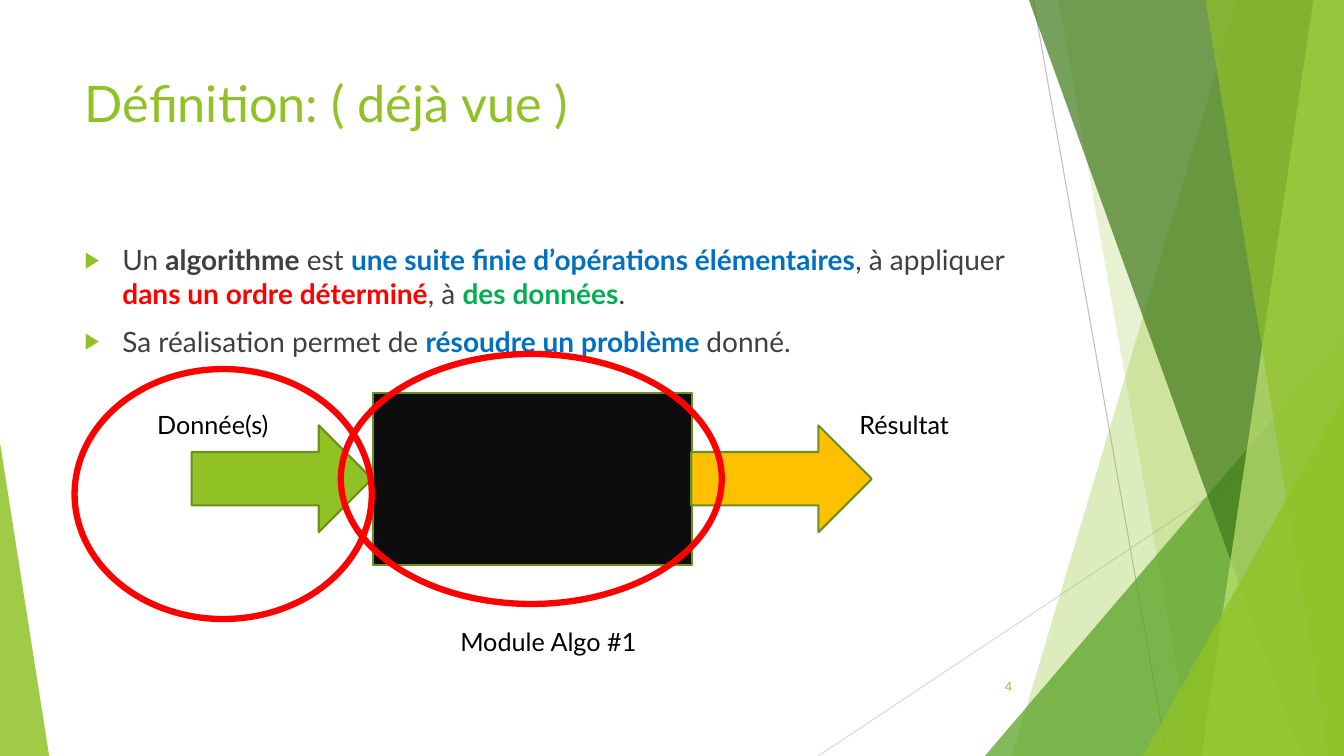
from lxml.etree import SubElement
from pptx import Presentation
from pptx.dml.color import RGBColor
from pptx.enum.shapes import MSO_CONNECTOR as Connector, MSO_SHAPE as Preset
from pptx.enum.text import MSO_ANCHOR as Anchor, MSO_AUTO_SIZE as AutoSize, PP_ALIGN as Align
from pptx.oxml.ns import qn
from pptx.util import Cm, Pt

WIDTH, HEIGHT = 33.87, 19.05
COLORS = {
    "green": "90C226", "mid green": "54A021", "dark green": "3F7819",
    "light green": "C0E474", "outline": "6B901C", "text": "404040",
    "blue": "0070C0", "red": "FF0000", "emerald": "00B050",
    "black": "000000", "box": "0D0D0D", "orange": "FFC000",
    "gray": "BFBFBF", "light gray": "D9D9D9",
}


def rgb(color):
    return RGBColor.from_string(COLORS[color])


def add_run(paragraph, text, size=18, color="black", bold=False):
    run = paragraph.add_run()
    run.text = text
    run.font.name = "Lato"
    run.font.size = Pt(size)
    run.font.bold = bold
    run.font.color.rgb = rgb(color)


class FacetSlide:
    def __init__(self, slide):
        self.slide = slide
        self.shapes = slide.shapes

    def paint(self, shape, fill=None, opacity=100, line=None, line_width=1.5):
        shape.shadow.inherit = False
        if fill:
            shape.fill.solid()
            shape.fill.fore_color.rgb = rgb(fill)
            if opacity < 100:
                tint = shape._element.xpath("./p:spPr/a:solidFill/a:srgbClr")[0]
                SubElement(tint, qn("a:alpha"), val=str(opacity * 1000))
        else:
            shape.fill.background()
        if line:
            shape.line.color.rgb = rgb(line)
            shape.line.width = Pt(line_width)
        else:
            shape.line.fill.background()

    def shape(self, preset, box, adjust=None, **style):
        shape = self.shapes.add_shape(preset, *map(Cm, box))
        if adjust is not None:
            shape.adjustments[0] = adjust
        self.paint(shape, **style)

    def band(self, top_x, bottom_x, **style):
        outline = self.shapes.build_freeform(Cm(top_x), 0)
        corners = [(WIDTH, 0), (WIDTH, HEIGHT), (bottom_x, HEIGHT)]
        outline.add_line_segments([(Cm(x), Cm(y)) for x, y in corners])
        self.paint(outline.convert_to_shape(), **style)

    def corner(self, left, top, width, peak, **style):
        box = (left, top, width, HEIGHT - top)
        self.shape(Preset.ISOSCELES_TRIANGLE, box, peak, **style)

    def line(self, ends, color):
        line = self.shapes.add_connector(Connector.STRAIGHT, *map(Cm, ends))
        line.line.color.rgb = rgb(color)
        line.line.width = Pt(0.75)
        SubElement(line._element.spPr, qn("a:effectLst"))

    def placeholder(self, index, box):
        holder = self.slide.placeholders[index]
        holder.left, holder.top, holder.width, holder.height = map(Cm, box)
        self.shapes._spTree.append(holder._element)
        frame = holder.text_frame
        frame.auto_size = AutoSize.NONE
        frame.vertical_anchor = Anchor.TOP
        return frame

    def title(self, text, box):
        heading = self.placeholder(0, box).paragraphs[0]
        heading.alignment = Align.LEFT
        add_run(heading, text, size=36, color="green")

    def bullets(self, items, box):
        frame = self.placeholder(1, box)
        for number, parts in enumerate(items):
            item = frame.add_paragraph() if number else frame.paragraphs[0]
            item.space_before = Pt(10)
            props = item._p.get_or_add_pPr()
            props.set("marL", str(Cm(0.95)))
            props.set("indent", str(-Cm(0.95)))
            bullet_color = SubElement(props, qn("a:buClr"))
            SubElement(bullet_color, qn("a:srgbClr"), val=COLORS["green"])
            SubElement(props, qn("a:buSzPct"), val="80000")
            SubElement(props, qn("a:buFont"), typeface="Arial")
            SubElement(props, qn("a:buChar"), char="▶")
            for text, color in parts:
                bold = color != "text"
                shown = "text" if color == "strong" else color
                add_run(item, text, size=20, color=shown, bold=bold)

    def label(self, text, box, align=Align.LEFT, anchor=Anchor.TOP, **style):
        frame = self.shapes.add_textbox(*map(Cm, box)).text_frame
        frame.word_wrap = True
        frame.vertical_anchor = anchor
        frame.paragraphs[0].alignment = align
        add_run(frame.paragraphs[0], text, **style)


def draw_background(page):
    page.line((26.04, 0, 29.41, HEIGHT), "gray")
    page.line((WIDTH, 10.24, 20.62, HEIGHT), "light gray")
    page.band(31.19, 25.5, fill="green", opacity=30)
    page.band(26.67, 30.05, fill="green", opacity=20)
    page.corner(24.82, 8.46, 9.05, 1, fill="mid green", opacity=72)
    page.band(25.93, 32.79, fill="dark green", opacity=70)
    page.band(33.1, 30.28, fill="light green", opacity=70)
    page.band(30.38, 33.48, fill="green", opacity=65)
    page.corner(28.8, 9.98, 5.07, 1, fill="green", opacity=80)
    page.corner(0, 11.15, 1.24, 0, fill="green", opacity=85)


def draw_module(page):
    page.shape(Preset.RECTANGLE, (9.4, 9.91, 8.03, 4.32), fill="box", line="outline")
    for left, color in ((4.83, "green"), (17.42, "orange")):
        page.shape(Preset.RIGHT_ARROW, (left, 10.72, 4.55, 2.69),
                   fill=color, line="outline")
    page.label("Donnée(s)", (3.71, 10.19, 5.69, 1.02))
    page.label("Résultat", (21.41, 10.19, 5.69, 1.02))
    for left, top, width in ((1.88, 9.3, 7.49), (8.59, 8.92, 9.6)):
        page.shape(Preset.OVAL, (left, top, width, 6.3), line="red", line_width=4.5)
    page.label("Module Algo #1", (11.35, 15.65, 6.86, 1.02))


def main():
    deck = Presentation()
    deck.slide_width, deck.slide_height = Cm(WIDTH), Cm(HEIGHT)
    page = FacetSlide(deck.slides.add_slide(deck.slide_layouts[1]))
    draw_background(page)
    page.title("Définition: ( déjà vue )", (1.88, 1.7, 23.88, 3.66))
    definition = [
        ("Un ", "text"), ("algorithme", "strong"), (" est ", "text"),
        ("une suite finie d’opérations élémentaires", "blue"),
        (", à appliquer ", "text"), ("dans un ordre déterminé", "red"),
        (", à ", "text"), ("des données", "emerald"), (".", "text"),
    ]
    purpose = [
        ("Sa réalisation permet de ", "text"),
        ("résoudre un problème ", "blue"), ("donné.", "text"),
    ]
    page.bullets([definition, purpose], (1.88, 5.99, 23.88, 10.77))
    page.label("4", (23.85, 16.79, 1.91, 1.02), align=Align.RIGHT,
               anchor=Anchor.MIDDLE, size=9, color="green")
    draw_module(page)
    deck.save("out.pptx")


if __name__ == "__main__":
    main()
